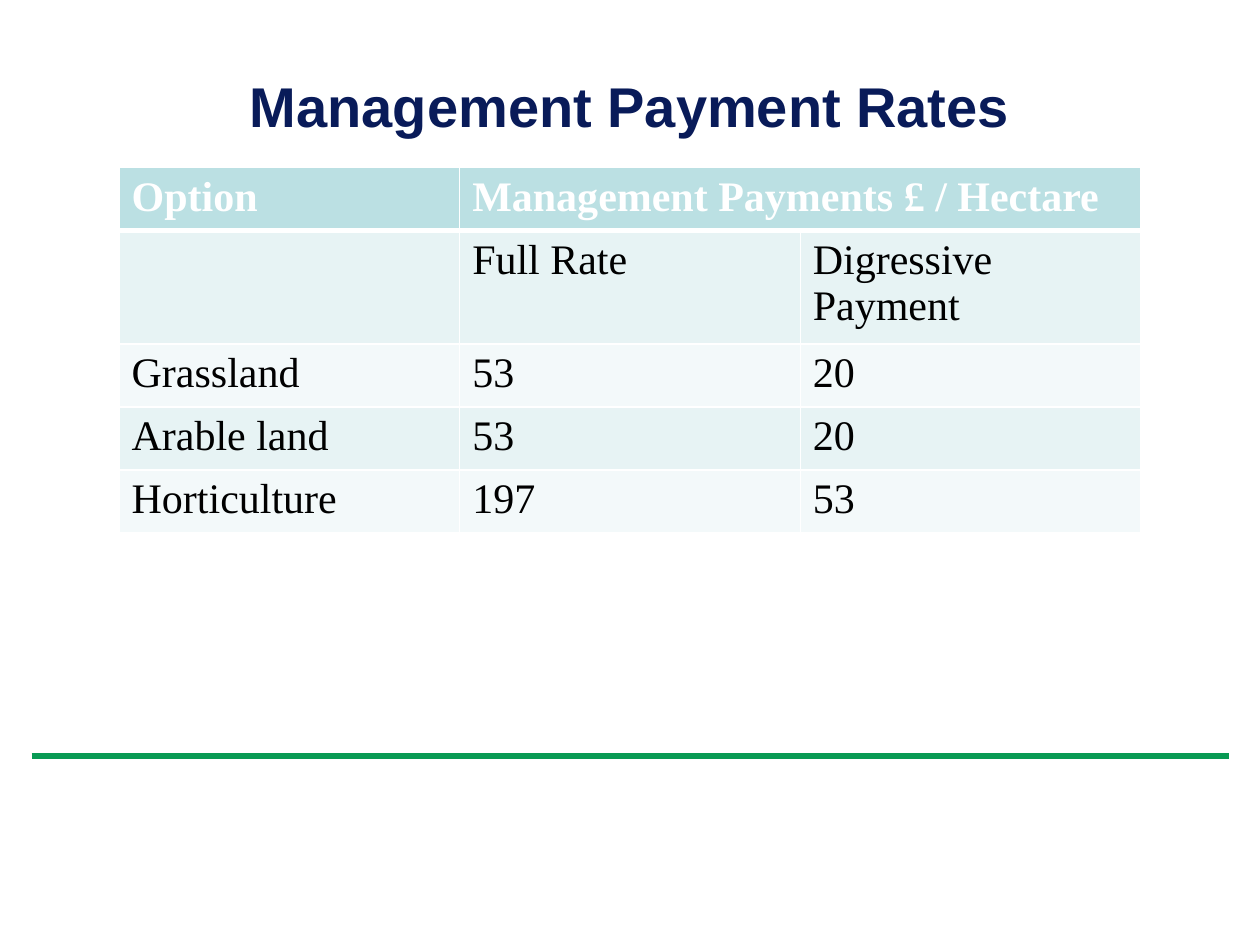
from lxml import etree
from pptx import Presentation
from pptx import util as u
from pptx.dml.color import RGBColor
from pptx.enum import shapes, text
from pptx.oxml import ns

NAVY = RGBColor(0x09, 0x1B, 0x59)
GREEN = RGBColor(0x08, 0x9A, 0x54)
WHITE = RGBColor(0xFF, 0xFF, 0xFF)
BLACK = RGBColor(0x00, 0x00, 0x00)
HEADER_FILL = RGBColor(0xBB, 0xE0, 0xE3)
BAND_FILLS = [RGBColor(0xE7, 0xF3, 0xF4), RGBColor(0xF3, 0xF9, 0xFA)]

COLUMNS, ROWS = 100, 75
RATES = [
    ["Option", "Management Payments £ / Hectare", ""],
    ["", "Full Rate", "Digressive Payment"],
    ["Grassland", "53", "20"],
    ["Arable land", "53", "20"],
    ["Horticulture", "197", "53"],
]


class SlideBuilder:
    """Places styled elements on a slide, measured in grid columns and rows."""

    title_font, body_font = "Arial", "Times New Roman"
    title_size, body_size = u.Pt(32), u.Pt(24)

    def __init__(self, deck):
        self.slide = deck.slides.add_slide(deck.slide_layouts[6])
        self.column = deck.slide_width / COLUMNS
        self.row = deck.slide_height / ROWS

    def place(self, left, top, width, height):
        return (int(left * self.column), int(top * self.row),
                int(width * self.column), int(height * self.row))

    def add_span(self, para, words, font, size, color, bold):
        span = para.add_run()
        span.text = words
        span.font.name, span.font.size = font, size
        span.font.bold = bold
        span.font.color.rgb = color

    def rule(self, left, right, row, color, width):
        start, level, length, _ = self.place(left, row, right - left, 0)
        line = self.slide.shapes.add_connector(
            shapes.MSO_CONNECTOR.STRAIGHT, start, level, start + length, level)
        line.line.color.rgb = color
        line.line.width = u.Pt(width)
        etree.SubElement(line._element.spPr, ns.qn("a:effectLst"))

    def title(self, words, *area):
        box = self.slide.shapes.add_textbox(*self.place(*area))
        frame = box.text_frame
        frame.word_wrap = True
        frame.vertical_anchor = text.MSO_ANCHOR.MIDDLE
        para = frame.paragraphs[0]
        para.alignment = text.PP_ALIGN.CENTER
        self.add_span(para, words, self.title_font, self.title_size, NAVY, True)

    def border(self, cell, widths):
        """Draw white edges; widths maps L, R, T and B to points."""
        properties = cell._tc.get_or_add_tcPr()
        for side, width in widths.items():
            edge = etree.SubElement(properties, ns.qn(f"a:ln{side}"), w=str(u.Pt(width)))
            fill = etree.SubElement(edge, ns.qn("a:solidFill"))
            etree.SubElement(fill, ns.qn("a:srgbClr"), val=str(WHITE))

    def table(self, records, left, top, width, row_height):
        area = self.place(left, top, width, row_height * len(records))
        grid = self.slide.shapes.add_table(len(records), len(records[0]), *area).table
        for r, record in enumerate(records):
            header = r == 0
            for c, words in enumerate(record):
                cell = grid.cell(r, c)
                self.border(cell, {"L": 1, "R": 1, "T": 3 if r == 1 else 1,
                                   "B": 3 if header else 1})
                cell.fill.solid()
                cell.fill.fore_color.rgb = HEADER_FILL if header else BAND_FILLS[(r - 1) % 2]
                para = cell.text_frame.paragraphs[0]
                if words:
                    self.add_span(para, words, self.body_font, self.body_size,
                                  WHITE if header else BLACK, header)
        grid.cell(0, 1).merge(grid.cell(0, 2))


def main():
    deck = Presentation()
    deck.slide_width, deck.slide_height = u.Inches(10), u.Inches(7.5)
    builder = SlideBuilder(deck)
    builder.rule(2.5, 97.5, 60, GREEN, 3)
    builder.title("Management Payment Rates", 9.6, 4.2, 80.8, 8.3)
    builder.table(RATES, 9.45, 13.3, 81.1, 4.1)
    deck.save("out.pptx")


if __name__ == "__main__":
    main()
